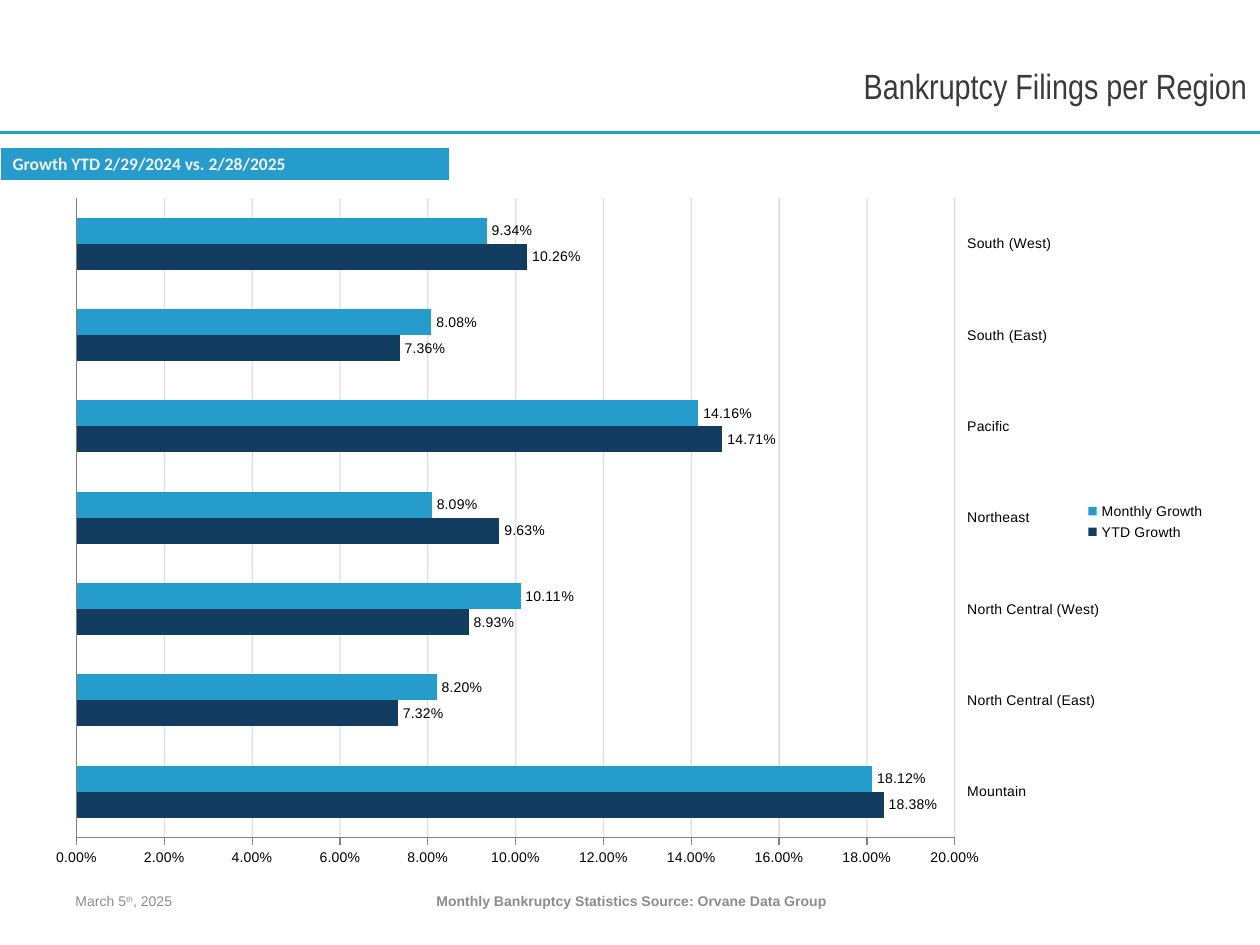
"""Build the slide on bankruptcy filing growth per region."""
from dataclasses import dataclass

from lxml import etree
from pptx import Presentation
from pptx import util as u
from pptx.chart.data import CategoryChartData
from pptx.dml.color import RGBColor
from pptx.enum import chart as charts, shapes, text
from pptx.oxml import ns, parse_xml

BLUE = RGBColor(0x26, 0x9C, 0xCC)
NAVY = RGBColor(0x12, 0x3D, 0x60)
CHARCOAL = RGBColor(0x3A, 0x3A, 0x3C)
GREY = RGBColor(0x8C, 0x8C, 0x8C)
AXIS_GREY = RGBColor(0x80, 0x80, 0x80)
PALE = RGBColor(0xF2, 0xF2, 0xF2)
WHITE = RGBColor(0xFF, 0xFF, 0xFF)
BLACK = RGBColor(0, 0, 0)
PERCENT = "0.00%"
PLOT_LAYOUT = {"x": 0.038, "y": 0.028, "w": 0.74, "h": 0.933}


@dataclass(frozen=True)
class Span:
    text: str
    size: float = 8
    face: str = "Arial"
    color: RGBColor = GREY
    bold: bool = False
    raised: bool = False


@dataclass(frozen=True)
class Growth:
    name: str
    color: RGBColor
    values: tuple[float, ...]


@dataclass(frozen=True)
class Footer:
    left: float
    width: float
    align: text.PP_ALIGN
    spans: tuple[Span, ...]


REGIONS = ("Mountain", "North Central (East)", "North Central (West)", "Northeast",
           "Pacific", "South (East)", "South (West)")
GROWTHS = (
    Growth("YTD Growth", NAVY, (0.1838, 0.0732, 0.0893, 0.0963, 0.1471, 0.0736, 0.1026)),
    Growth("Monthly Growth", BLUE, (0.1812, 0.082, 0.1011, 0.0809, 0.1416, 0.0808, 0.0934)),
)
FOOTERS = (
    Footer(226, 270, text.PP_ALIGN.CENTER,
           (Span("Monthly Bankruptcy Statistics Source: Orvane Data Group", bold=True),)),
    Footer(36, 168, text.PP_ALIGN.LEFT,
           (Span("March 5"), Span("th", raised=True), Span(", 2025"))),
)


def write(frame, spans: tuple[Span, ...], align: text.PP_ALIGN) -> None:
    """Fill the first paragraph of a text frame run by run."""
    para = frame.paragraphs[0]
    para.alignment = align
    for span in spans:
        run = para.add_run()
        run.text = span.text
        run.font.size = u.Pt(span.size)
        run.font.name = span.face
        run.font.bold = span.bold
        run.font.color.rgb = span.color
        if span.raised:
            run.font._element.set("baseline", "30000")


def add_title(page) -> None:
    """Place the title and the rule under it."""
    title = page.shapes.title
    title.left, title.top, title.width, title.height = map(u.Pt, (0, 21.6, 720, 54))
    title.text_frame.vertical_anchor = text.MSO_ANCHOR.MIDDLE
    write(title.text_frame,
          (Span("Bankruptcy Filings per Region", 20, "Arial Narrow", CHARCOAL),),
          text.PP_ALIGN.RIGHT)
    rule = page.shapes.add_connector(shapes.MSO_CONNECTOR.STRAIGHT, u.Pt(0), u.Pt(75.6),
                                     u.Pt(720), u.Pt(75.6))
    rule.line.color.rgb = BLUE
    rule.line.width = u.Pt(1.5)
    etree.SubElement(rule._element.spPr, ns.qn("a:effectLst"))


def add_banner(page) -> None:
    """Add the one-cell table that names the period."""
    table = page.shapes.add_table(1, 1, u.Pt(0), u.Pt(84.2), u.Pt(257), u.Pt(16)).table
    cell = table.cell(0, 0)
    cell.vertical_anchor = text.MSO_ANCHOR.MIDDLE
    write(cell.text_frame,
          (Span("Growth YTD 2/29/2024 vs. 2/28/2025", 10, "Calibri", PALE, True),),
          text.PP_ALIGN.LEFT)
    cell.fill.solid()
    cell.fill.fore_color.rgb = BLUE
    border = parse_xml(f'<a:lnB {ns.nsdecls("a")} w="{u.Pt(2)}"><a:solidFill>'
                       f'<a:srgbClr val="{WHITE}"/></a:solidFill></a:lnB>')
    cell._tc.get_or_add_tcPr().insert(0, border)


def clear_fill(opacity: int):
    """Return chart shape properties with a translucent white fill and no line."""
    return parse_xml(f'<c:spPr {ns.nsdecls("c", "a")}><a:solidFill><a:srgbClr val="{WHITE}">'
                     f'<a:alpha val="{opacity * 1000}"/></a:srgbClr></a:solidFill>'
                     '<a:ln><a:noFill/></a:ln></c:spPr>')


def set_plot_layout(area) -> None:
    """Fix the inner plot area as fractions of the chart."""
    for old in area.findall(ns.qn("c:layout")):
        area.remove(old)
    modes = '<c:xMode val="edge"/><c:yMode val="edge"/>'
    sizes = "".join(f'<c:{key} val="{value}"/>' for key, value in PLOT_LAYOUT.items())
    area.insert(0, parse_xml(f'<c:layout {ns.nsdecls("c")}><c:manualLayout>'
                             f'<c:layoutTarget val="inner"/>{modes}{sizes}'
                             '</c:manualLayout></c:layout>'))


def format_axes(chart) -> None:
    """Style both axes and the gridlines."""
    for axis in (chart.category_axis, chart.value_axis):
        axis.format.line.color.rgb = AXIS_GREY
        axis.format.line.width = u.Pt(0.75)
        axis.minor_tick_mark = charts.XL_TICK_MARK.NONE
    regions, rates = chart.category_axis, chart.value_axis
    regions.major_tick_mark = charts.XL_TICK_MARK.NONE
    regions.tick_label_position = charts.XL_TICK_LABEL_POSITION.HIGH
    rates.major_tick_mark = charts.XL_TICK_MARK.OUTSIDE
    rates.minimum_scale, rates.maximum_scale, rates.major_unit = 0, 0.2, 0.02
    rates.tick_labels.number_format = PERCENT
    rates.tick_labels.number_format_is_linked = False
    grid = rates.major_gridlines
    grid.format.line.color.rgb = AXIS_GREY
    grid.format.line.width = u.Pt(0.75)
    shade = next(rates._element.find(ns.qn("c:majorGridlines")).iter(ns.qn("a:srgbClr")))
    etree.SubElement(shade, ns.qn("a:alpha")).set("val", "25000")


def add_growth_chart(page) -> None:
    """Add the clustered bars of growth by region."""
    data = CategoryChartData(number_format=PERCENT)
    data.categories = REGIONS
    for growth in GROWTHS:
        data.add_series(growth.name, growth.values)
    chart = page.shapes.add_chart(charts.XL_CHART_TYPE.BAR_CLUSTERED, u.Pt(18), u.Pt(102.2),
                                  u.Pt(678.2), u.Pt(392.4), data).chart
    chart.has_title = False
    chart.font.size = u.Pt(8)
    chart.font.name = "Arial"
    chart.font.color.rgb = BLACK
    chart.has_legend = True
    chart.legend.position = charts.XL_LEGEND_POSITION.RIGHT
    chart.legend.include_in_layout = False
    plot = chart.plots[0]
    plot.gap_width = 150
    plot.vary_by_categories = False
    for series, growth in zip(plot.series, GROWTHS):
        series.format.fill.solid()
        series.format.fill.fore_color.rgb = growth.color
        labels = series.data_labels
        labels.show_value = True
        labels.number_format = PERCENT
        labels.number_format_is_linked = False
        labels.position = charts.XL_LABEL_POSITION.OUTSIDE_END
    format_axes(chart)
    body = chart.element.find(ns.qn("c:chart"))
    area = body.find(ns.qn("c:plotArea"))
    set_plot_layout(area)
    area.append(clear_fill(50))
    body.addnext(clear_fill(90))


def add_footer(page, footer: Footer) -> None:
    """Add one line of text at the foot of the slide."""
    box = page.shapes.add_textbox(u.Pt(footer.left), u.Pt(500.4), u.Pt(footer.width), u.Pt(28.8))
    box.text_frame.word_wrap = True
    box.text_frame.vertical_anchor = text.MSO_ANCHOR.MIDDLE
    write(box.text_frame, footer.spans, footer.align)


def main() -> None:
    """Build and save the deck."""
    deck = Presentation()
    deck.slide_width, deck.slide_height = u.Pt(720), u.Pt(540)
    page = deck.slides.add_slide(deck.slide_layouts[5])
    add_title(page)
    add_growth_chart(page)
    add_banner(page)
    for footer in FOOTERS:
        add_footer(page, footer)
    deck.save("out.pptx")


if __name__ == "__main__":
    main()
